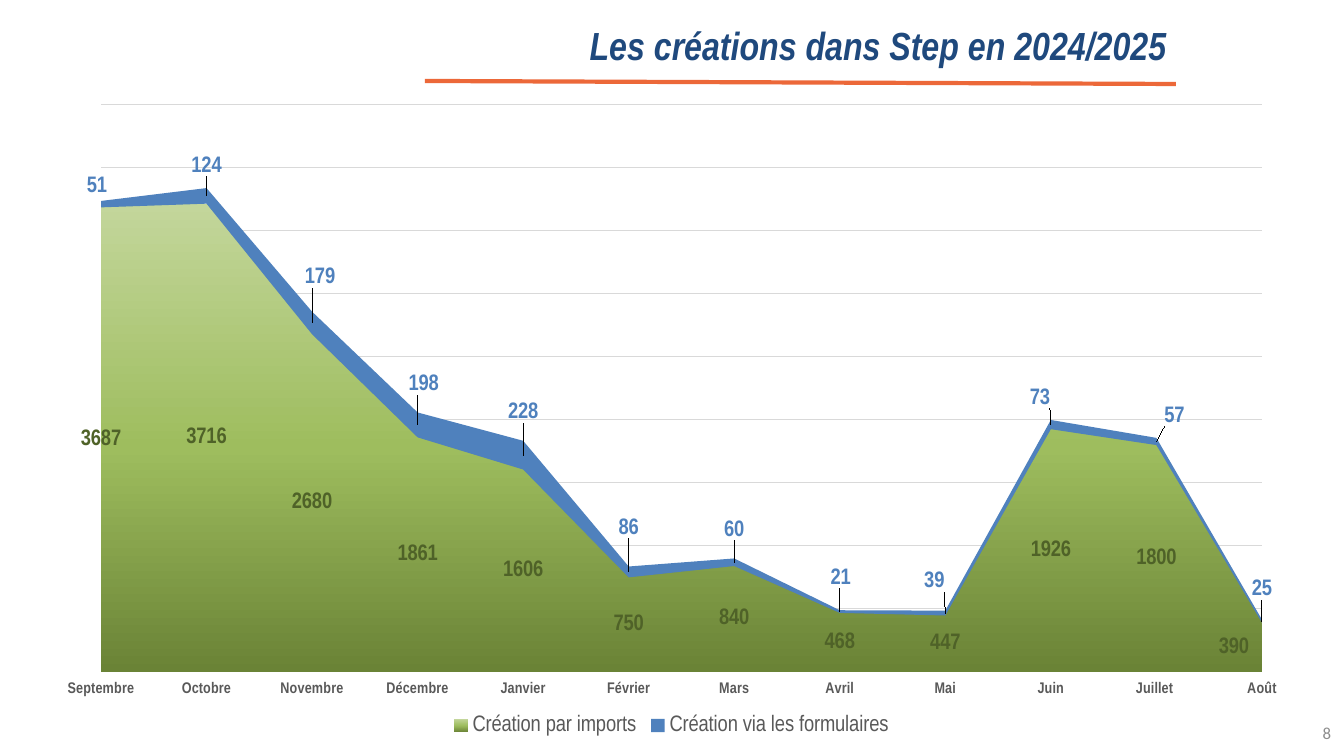
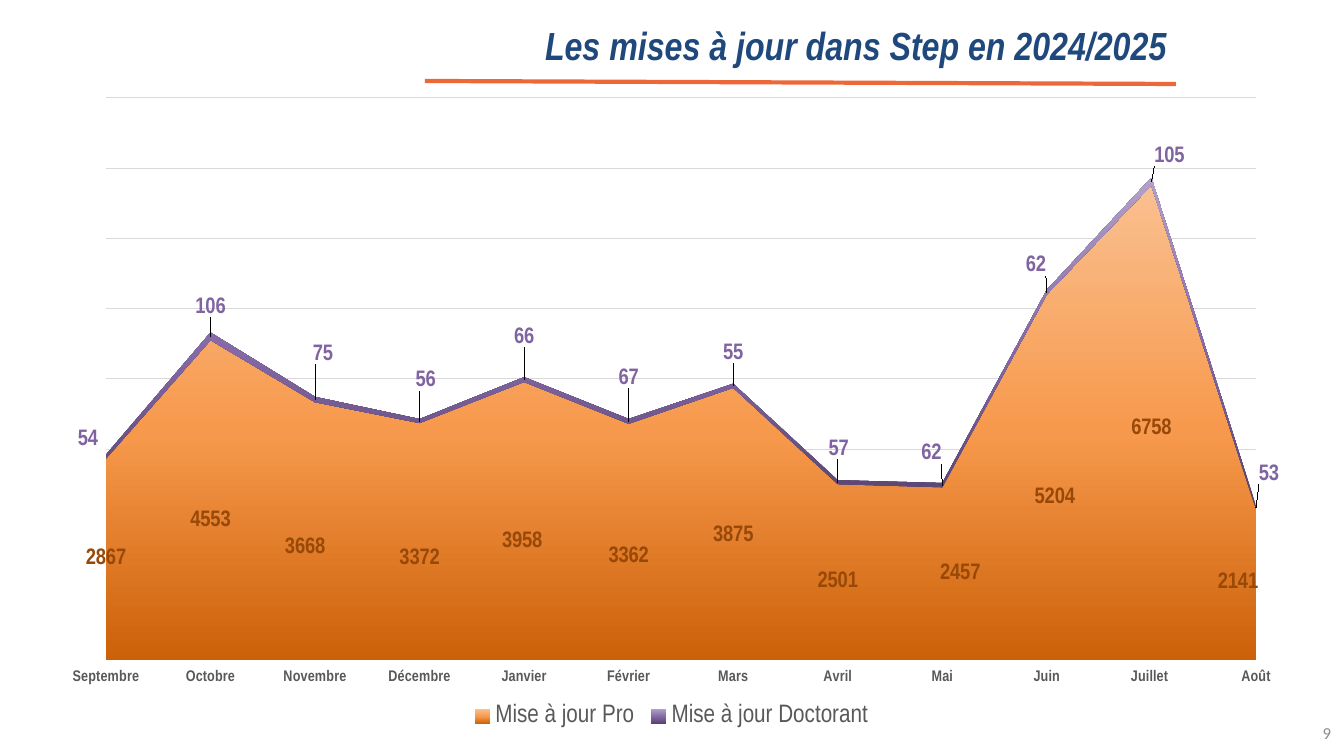
from lxml import etree
from copy import deepcopy
from pptx import Presentation
from pptx.chart.data import CategoryChartData
from pptx.dml.color import RGBColor
from pptx.enum.chart import XL_CHART_TYPE, XL_LEGEND_POSITION, XL_TICK_LABEL_POSITION, XL_TICK_MARK
from pptx.enum.shapes import MSO_CONNECTOR
from pptx.enum.text import MSO_ANCHOR, MSO_AUTO_SIZE, PP_ALIGN
from pptx.oxml.ns import qn
from pptx.util import Pt

PX = 9071  # EMU in one px
AREA_STACKED = XL_CHART_TYPE.AREA_STACKED
BOTTOM = XL_LEGEND_POSITION.BOTTOM
LOW = XL_TICK_LABEL_POSITION.LOW
NO_TICK = XL_TICK_MARK.NONE
STRAIGHT = MSO_CONNECTOR.STRAIGHT
MIDDLE = MSO_ANCHOR.MIDDLE
NO_FIT = MSO_AUTO_SIZE.NONE
RIGHT = PP_ALIGN.RIGHT

NARROW = "Arial Narrow"
NAVY, ORANGE = "1F497D", "EC6839"
GRAY, GRID, NUMBER_GRAY = "595959", "D9D9D9", "8C8C8C"

MONTHS = ["Septembre", "Octobre", "Novembre", "Décembre", "Janvier", "Février",
          "Mars", "Avril", "Mai", "Juin", "Juillet ", "Août"]

# Label shifts (right, down) in px for the thin upper band, by month index
UPPER_SHIFTS = {1: (0, -29), 2: (8, -45), 3: (6, -40), 4: (0, -42), 5: (0, -43), 6: (0, -32),
                7: (1, -33), 8: (-11, -31), 9: (-11, -26), 10: (18, -25)}

# Boxes are left, top, width, height in px; a fill is one colour or gradient stops
PAGES = [
    {"title": "Les créations dans Step en 2024/2025", "number": "8",
     "box": (42, 93, 1259, 647), "plot": (101, 105, 1161, 567),
     "top_value": 4500, "step": 500, "legend_size": 16,
     "series": [
         {"name": "Création par imports",
          "values": [3687, 3716, 2680, 1861, 1606, 750, 840, 468, 447, 1926, 1800, 390],
          "fill": [(0, "6A8336"), (0.48, "9EBD5E"), (1, "C3D69B")], "label_color": "4F6228",
          "shifts": {11: (-28, 0)}},
         {"name": "Création via les formulaires",
          "values": [51, 124, 179, 198, 228, 86, 60, 21, 39, 73, 57, 25],
          "fill": "4F81BD", "label_color": "4F81BD",
          "shifts": {0: (-4, -17), **UPPER_SHIFTS, 11: (0, -31)}}]},
    {"title": "Les mises à jour dans Step en 2024/2025", "number": "9",
     "box": (47, 86, 1249, 647), "plot": (106, 98, 1150, 562),
     "top_value": 8000, "step": 1000, "legend_size": 18,
     "series": [
         {"name": "Mise à jour Pro",
          "values": [2867, 4553, 3668, 3372, 3958, 3362, 3875, 2501, 2457, 5204, 6758, 2141],
          "fill": [(0, "CC6109"), (0.48, "F7994C"), (1, "FAC090")], "label_color": "984807",
          "shifts": {1: (0, 21), 2: (-10, 17), 3: (0, 17), 4: (-2, 21), 5: (0, 15), 6: (0, 12),
                     7: (0, 10), 8: (18, 0), 9: (8, 21), 10: (0, 6), 11: (-18, -2)}},
         {"name": "Mise à jour Doctorant",
          "values": [54, 106, 75, 56, 66, 67, 55, 57, 62, 62, 105, 53],
          "fill": [(0, "56426E"), (0.48, "8469A5"), (1, "B3A2C7")], "label_color": "8064A2",
          "shifts": {0: (-18, -17), **UPPER_SHIFTS, 11: (13, -33)}}]},
]


def style_font(font, size, color, name=NARROW, bold=False):
    font.size, font.name, font.bold = Pt(size), name, bold
    font.color.rgb = RGBColor.from_string(color)


def manual_layout(**settings):
    layout = etree.Element(qn("c:layout"))
    manual = etree.SubElement(layout, qn("c:manualLayout"))
    for key, value in settings.items():
        etree.SubElement(manual, qn("c:" + key)).set("val", str(value))
    return layout


deck = Presentation()
deck.slide_width, deck.slide_height = 1344 * PX, 756 * PX

for content in PAGES:
    page = deck.slides.add_slide(deck.slide_layouts[5])

    # Title
    title = page.shapes.title
    title.left, title.top, title.width, title.height = [v * PX for v in (110, 16, 1066, 58)]
    frame = title.text_frame
    frame.text = content["title"]
    frame.auto_size, frame.vertical_anchor, frame.word_wrap = NO_FIT, MIDDLE, True
    frame.margin_left, frame.margin_right = 39 * PX, 10 * PX
    para = frame.paragraphs[0]
    para.alignment = RIGHT
    style_font(para.font, 28, NAVY, bold=True)
    para.font.italic = True

    # Rule under the title
    rule = page.shapes.add_connector(STRAIGHT, *[v * PX for v in (425, 81, 1176, 84)])
    rule.line.width = Pt(3)
    rule.line.color.rgb = RGBColor.from_string(ORANGE)
    etree.SubElement(rule._element.spPr, qn("a:effectLst"))

    # Page number
    number = page.shapes.add_textbox(*[v * PX for v in (1276, 713, 65, 40)])
    frame = number.text_frame
    frame.text = content["number"]
    frame.word_wrap, frame.vertical_anchor = True, MIDDLE
    para = frame.paragraphs[0]
    para.alignment = RIGHT
    style_font(para.font, 12, NUMBER_GRAY, "Calibri")

    # Stacked area chart
    data = CategoryChartData()
    data.categories = MONTHS
    for band in content["series"]:
        data.add_series(band["name"], band["values"])
    left, top, width, height = content["box"]
    chart = page.shapes.add_chart(AREA_STACKED, *[v * PX for v in content["box"]], data).chart
    chart.has_title = False
    style_font(chart.font, 10, "000000", "Calibri")

    # Plot position inside the chart
    plot_left, plot_top, plot_width, plot_height = content["plot"]
    plot_area = chart._chartSpace.chart.plotArea
    for old_layout in plot_area.findall(qn("c:layout")):
        plot_area.remove(old_layout)
    plot_area.insert(0, manual_layout(
        layoutTarget="inner", xMode="edge", yMode="edge",
        x=(plot_left - left) / width, y=(plot_top - top) / height,
        w=plot_width / width, h=plot_height / height))

    # Legend
    chart.has_legend = True
    chart.legend.position = BOTTOM
    chart.legend.include_in_layout = False
    style_font(chart.legend.font, content["legend_size"], GRAY)

    # Axes
    months = chart.category_axis
    months.major_tick_mark = months.minor_tick_mark = NO_TICK
    months.tick_label_position = LOW
    months.has_major_gridlines = False
    style_font(months.tick_labels.font, 11, GRAY, bold=True)
    counts = chart.value_axis
    counts.minimum_scale, counts.maximum_scale = 0, content["top_value"]
    counts.major_unit = content["step"]
    counts.has_major_gridlines = True
    counts.visible = False
    for line in (months.format.line, counts.major_gridlines.format.line):
        line.width = Pt(0.75)
        line.color.rgb = RGBColor.from_string(GRID)
    for crossing in plot_area.iter(qn("c:crossBetween")):
        crossing.set("val", "midCat")

    # Bands and their labels
    for series, band in zip(chart.plots[0].series, content["series"]):
        fill = series.format.fill
        if isinstance(band["fill"], str):
            fill.solid()
            fill.fore_color.rgb = RGBColor.from_string(band["fill"])
        else:
            fill.gradient()
            fill.gradient_angle = 90
            stop_list = next(series._element.iter(qn("a:gsLst")))
            stop_list.insert(1, deepcopy(stop_list[0]))
            for stop, (position, color) in zip(fill.gradient_stops, band["fill"]):
                stop.position = position
                stop.color.rgb = RGBColor.from_string(color)
        series.format.line.fill.background()

        labels = series.data_labels
        labels.show_value = True
        style_font(labels.font, 16, band["label_color"], bold=True)
        for index, (right, down) in band["shifts"].items():
            style_font(series.points[index].data_label.font, 16, band["label_color"], bold=True)
        for label in series._element.iter(qn("c:dLbl")):
            index_tag = label.find(qn("c:idx"))
            right, down = band["shifts"][int(index_tag.get("val"))]
            index_tag.addnext(manual_layout(x=right / width, y=down / height))

deck.save("out.pptx")
